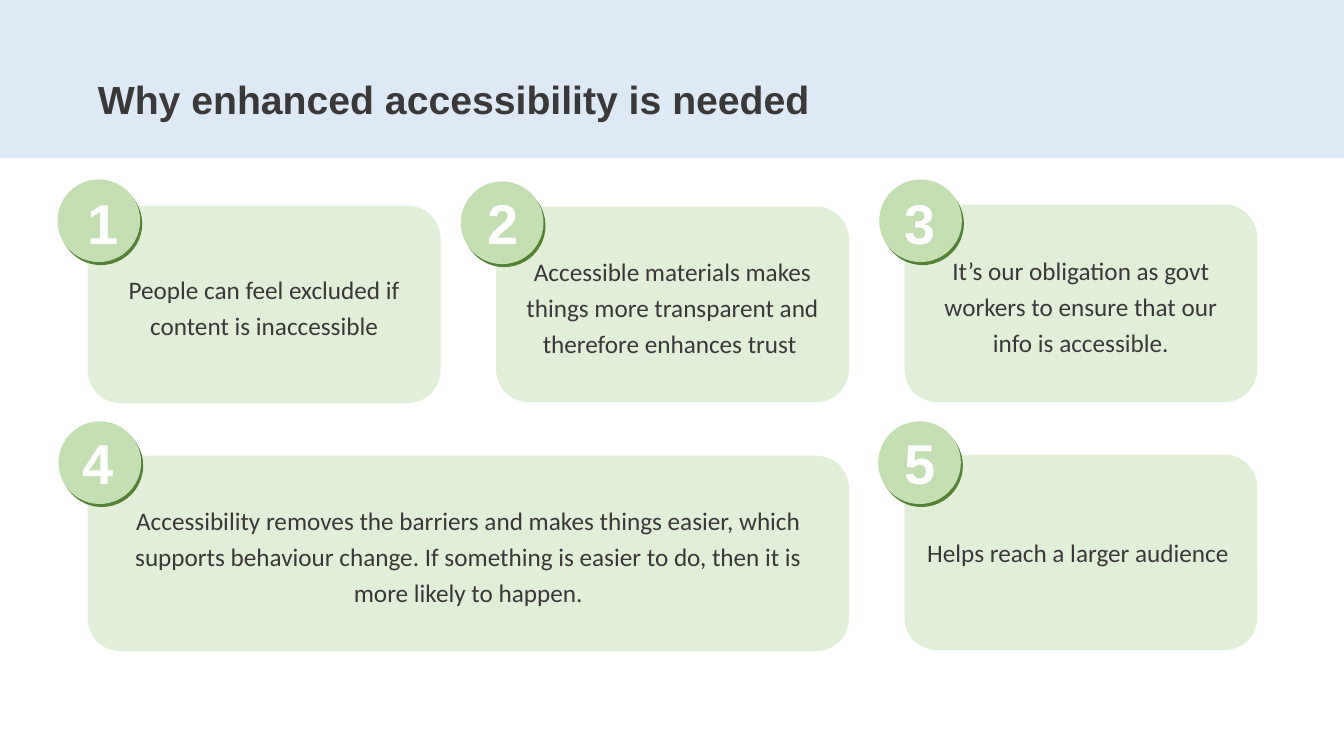
import pptx
import pptx.util
import pptx.dml.color
import pptx.enum.shapes
import pptx.enum.text

Inches = pptx.util.Inches
RGBColor = pptx.dml.color.RGBColor
SHAPE = pptx.enum.shapes.MSO_SHAPE
ALIGN = pptx.enum.text.PP_ALIGN

BAND_BLUE = RGBColor(0xDD, 0xEA, 0xF6)
CARD_GREEN = RGBColor(0xE1, 0xEF, 0xD8)
BADGE_GREEN = RGBColor(0xC4, 0xE0, 0xB2)
RIM_GREEN = RGBColor(0x54, 0x81, 0x35)
INK = RGBColor(0x3A, 0x38, 0x38)
WHITE = RGBColor(0xFF, 0xFF, 0xFF)

# Grid, in inches
MARGIN, COLUMN_PITCH, CARD_WIDTH = 0.87, 4.05, 3.5
BADGE_SIZE = 0.82
NUMBER_TOPS = [1.93, 4.31]

deck = pptx.Presentation()
deck.slide_width, deck.slide_height = Inches(13.33), Inches(7.5)
page = deck.slides.add_slide(deck.slide_layouts[5])


def add_block(kind, left, top, width, height, color):
    block = page.shapes.add_shape(
        kind, Inches(left), Inches(top), Inches(width), Inches(height))
    block.shadow.inherit = False
    block.fill.solid()
    block.fill.fore_color.rgb = color
    block.line.fill.background()
    return block


def write(box, text, font, size, color, bold, align, spacing):
    frame = box.text_frame
    frame.text = text
    frame.word_wrap = True
    frame.auto_size = pptx.enum.text.MSO_AUTO_SIZE.NONE
    frame.vertical_anchor = pptx.enum.text.MSO_ANCHOR.MIDDLE
    para = frame.paragraphs[0]
    para.alignment = align
    para.line_spacing = spacing
    span = para.runs[0]
    span.font.name = font
    span.font.size = pptx.util.Pt(size)
    span.font.bold = bold
    span.font.color.rgb = color


# Header band, sent behind the title
band = add_block(SHAPE.RECTANGLE, 0, 0, 13.33, 1.57, BAND_BLUE)
page.shapes._spTree.insert(2, band._element)

# Title
title = page.shapes.title
title.left, title.top = Inches(MARGIN), Inches(0.65)
title.width, title.height = Inches(8.54), Inches(0.63)
write(title, "Why enhanced accessibility is needed",
      "Arial", 28, INK, True, ALIGN.LEFT, 1.07)

# Reasons: column, row, columns spanned, card top and height,
# badge left and top, number left, line spacing, text
reasons = [
    (0, 0, 1, 2.04, 1.96, 0.57, 1.78, 0.77, 1.2,
     "People can feel excluded if content is inaccessible"),
    (1, 0, 1, 2.05, 1.94, 4.57, 1.80, 4.74, 1.2,
     "Accessible materials makes things more transparent and "
     "therefore enhances trust "),
    (2, 0, 1, 2.03, 1.96, 8.72, 1.78, 8.87, 1.2,
     "It’s our obligation as govt workers to ensure that our "
     "info is accessible."),
    (0, 1, 2, 4.52, 1.94, 0.58, 4.18, 0.72, 1.2,
     "Accessibility removes the barriers and makes things easier, which "
     "supports behaviour change. If something is easier to do, then it is "
     "more likely to happen."),
    (2, 1, 1, 4.51, 1.94, 8.71, 4.18, 8.87, 1.0,
     "Helps reach a larger audience "),
]

for number, reason in enumerate(reasons, start=1):
    (column, row, span_count, top, height,
     badge_left, badge_top, number_left, spacing, text) = reason

    # Card
    width = CARD_WIDTH + (span_count - 1) * COLUMN_PITCH
    card = add_block(SHAPE.ROUNDED_RECTANGLE, MARGIN + column * COLUMN_PITCH,
                     top, width, height, CARD_GREEN)
    write(card, text, "Calibri", 18, INK, False, ALIGN.CENTER, spacing)

    # Badge with a darker rim peeking out below right
    for offset, color in [(0.03, RIM_GREEN), (0, BADGE_GREEN)]:
        add_block(SHAPE.OVAL, badge_left + offset * 0.67, badge_top + offset,
                  BADGE_SIZE, BADGE_SIZE, color)

    # Number
    label = page.shapes.add_textbox(
        Inches(number_left), Inches(NUMBER_TOPS[row]), Inches(0.65), Inches(0.51))
    write(label, str(number), "Arial", 40, WHITE, True, ALIGN.LEFT, 1.07)

deck.save("out.pptx")
